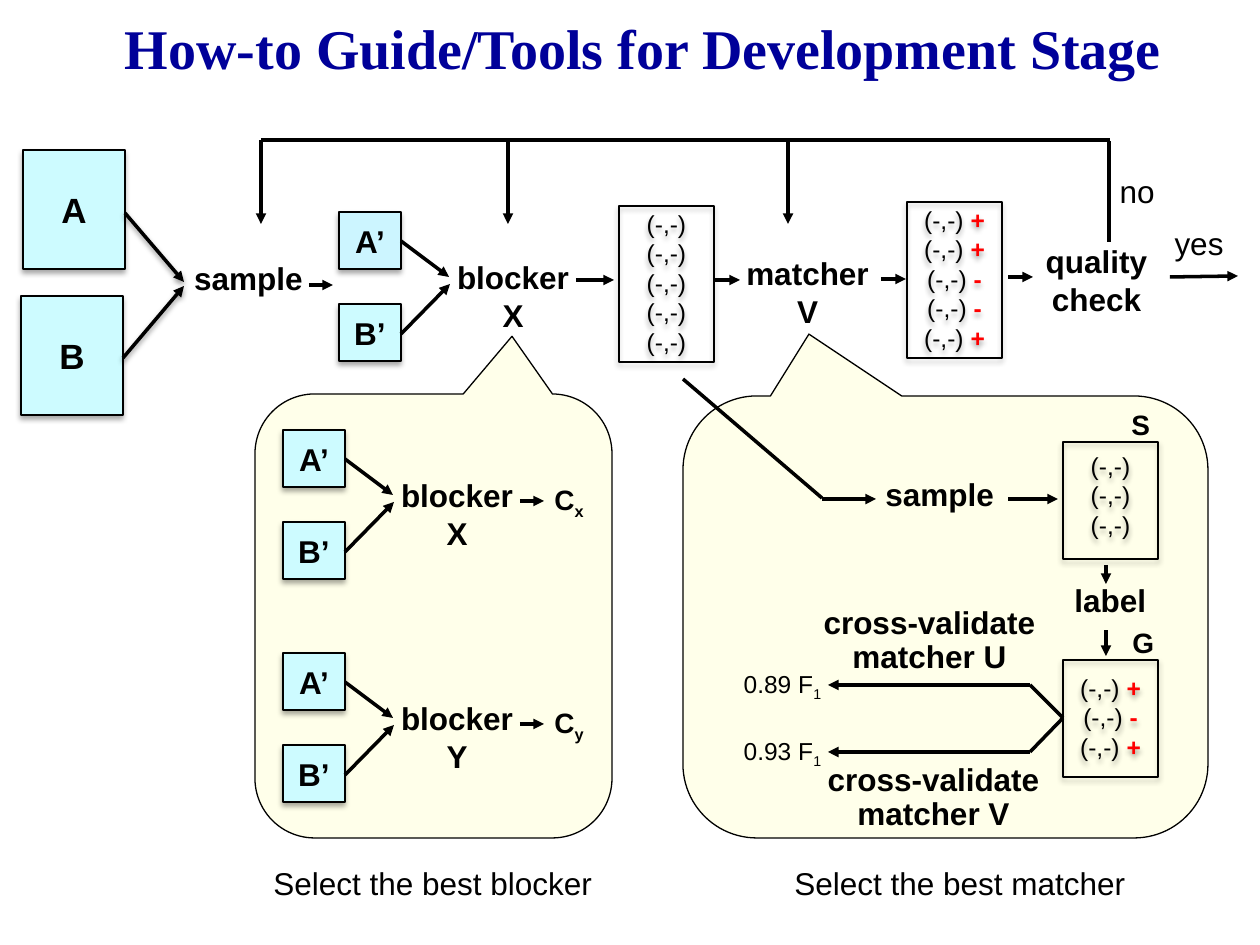
from dataclasses import dataclass

from lxml import etree
from pptx import Presentation
from pptx.dml.color import RGBColor
from pptx.enum.shapes import MSO_CONNECTOR, MSO_SHAPE
from pptx.enum.text import MSO_ANCHOR, PP_ALIGN
from pptx.oxml.ns import qn
from pptx.util import Emu, Pt

RECT = MSO_SHAPE.RECTANGLE
BUBBLE = MSO_SHAPE.ROUNDED_RECTANGULAR_CALLOUT
STRAIGHT = MSO_CONNECTOR.STRAIGHT
LEFT, MID = PP_ALIGN.LEFT, PP_ALIGN.CENTER
TOP, MIDDLE = MSO_ANCHOR.TOP, MSO_ANCHOR.MIDDLE

BLACK, RED, NAVY = "000000", "FF0000", "000099"
CYAN, SKY, CREAM = "CDFBFF", "CCF5FF", "FFFFEA"
SCALE = 914400 / 126


@dataclass
class Label:
    """Text box; "_" starts a subscript and "|" a red mark."""
    text: str
    x: int
    y: int
    w: int
    h: int
    size: int = 18
    bold: bool = True
    align: PP_ALIGN = MID
    gap: float = 1.0


@dataclass
class Frame:
    """Unfilled box with a list of pairs."""
    text: str
    x: int
    y: int
    h: int
    top: int


@dataclass
class Line:
    x1: int
    y1: int
    x2: int
    y2: int
    tip: bool = True
    shade: bool = False


def px(n: int) -> Emu:
    return Emu(round(n * SCALE))


def rgb(code: str) -> RGBColor:
    return RGBColor.from_string(code)


def style(run, size: int, bold: bool, color: str = BLACK) -> None:
    font = run.font
    font.name, font.size, font.bold = "Arial", Pt(size), bold
    font.color.rgb = rgb(color)


def write(frame, text: str, size: int, bold: bool, align=MID, gap: float = 1.0) -> None:
    frame.word_wrap = True
    frame.text = text
    for para in frame.paragraphs:
        para.alignment, para.line_spacing = align, gap
        full = para.text
        sign = next((s for s in "_|" if s in full), None)
        if sign is None:
            style(para.runs[0], size, bold)
            continue
        main, mark = full.split(sign)
        para.text = main
        style(para.runs[0], size, bold)
        run = para.add_run()
        run.text = mark
        if sign == "_":
            style(run, size, bold)
            run.font._element.set("baseline", "-25000")
        else:
            style(run, size, True, RED)


def shade(item, on: bool = True, alpha: int = 35) -> None:
    """Add an effect list, with a soft drop shadow if wanted."""
    props = item._element.spPr
    for old in props.findall(qn("a:effectLst")):
        props.remove(old)
    effects = etree.SubElement(props, qn("a:effectLst"))
    if on:
        drop = etree.SubElement(effects, qn("a:outerShdw"), blurRad="39400",
                                dist="22900", dir="5400000", rotWithShape="0")
        color = etree.SubElement(drop, qn("a:srgbClr"), val=BLACK)
        etree.SubElement(color, qn("a:alpha"), val=str(alpha * 1000))


def shape(kind, x: int, y: int, w: int, h: int, fill: str | None):
    item = slide.shapes.add_shape(kind, px(x), px(y), px(w), px(h))
    if fill:
        item.fill.solid()
        item.fill.fore_color.rgb = rgb(fill)
    else:
        item.fill.background()
    item.line.color.rgb = rgb(BLACK)
    item.line.width = Pt(0.75)
    return item


def draw_label(label: Label) -> None:
    box = slide.shapes.add_textbox(px(label.x), px(label.y), px(label.w), px(label.h))
    write(box.text_frame, label.text, label.size, label.bold, label.align, label.gap)


def draw_table(x: int, y: int, w: int, h: int, text: str, size: int, fill: str = CYAN) -> None:
    box = shape(RECT, x, y, w, h, fill)
    shade(box)
    box.text_frame.vertical_anchor = MIDDLE
    write(box.text_frame, text, size, True)


def draw_frame(frame: Frame) -> None:
    box = shape(RECT, frame.x, frame.y, 95, frame.h, None)
    shade(box)
    body = box.text_frame
    body.vertical_anchor, body.margin_top = TOP, px(frame.top)
    body.margin_left = body.margin_right = body.margin_bottom = 0
    write(body, frame.text, 14, False)


def draw_line(line: Line) -> None:
    link = slide.shapes.add_connector(STRAIGHT, px(line.x1), px(line.y1), px(line.x2), px(line.y2))
    link.line.color.rgb = rgb(BLACK)
    link.line.width = Pt(2)
    if line.tip:
        etree.SubElement(link.line._get_or_add_ln(), qn("a:tailEnd"), type="triangle")
    shade(link, line.shade, 38)


def draw_bubble(x: int, y: int, w: int, h: int, tip: tuple[float, float]) -> None:
    item = shape(BUBBLE, x, y, w, h, CREAM)
    item.shadow.inherit = False
    item.adjustments[0], item.adjustments[1] = tip
    item.adjustments[2] = 0.167


def draw_blocker(x: int, y: int, name: str, fill: str = CYAN) -> None:
    """Two sampled tables feeding one blocker."""
    draw_table(x, y, 62, 57, "A’", 18, fill)
    draw_table(x, y + 92, 62, 57, "B’", 18)
    draw_line(Line(x + 62, y + 29, x + 110, y + 65))
    draw_line(Line(x + 62, y + 122, x + 111, y + 72))
    draw_label(Label(f"blocker {name}", x + 103, y + 40, 142, 89))


deck = Presentation()
deck.slide_width, deck.slide_height = px(1260), px(945)
slide = deck.slides.add_slide(deck.slide_layouts[5])

# Title
title = slide.shapes.title
title.left, title.top, title.width, title.height = px(108), px(0), px(1071), px(94)
title.text_frame.text = "How-to Guide/Tools for Development Stage"
title.text_frame.vertical_anchor = MIDDLE
head = title.text_frame.paragraphs[0]
head.alignment = MID
style(head.runs[0], 32, True, NAVY)
head.runs[0].font.name = "Times New Roman"

# Callout bubbles
draw_bubble(255, 394, 357, 444, (0.22, -0.63))
draw_bubble(683, 396, 525, 442, (-0.26, -0.64))

# Input tables and blockers
draw_table(23, 150, 102, 119, "A", 20)
draw_table(21, 296, 102, 119, "B", 20)
draw_blocker(339, 212, "X", SKY)
for y, name in ((430, "X"), (653, "Y")):
    draw_blocker(283, y, name)
    draw_line(Line(520, y + 71, 544, y + 71))
    draw_label(Label(f"C_{name.lower()}", 542, y + 46, 60, 47, 16, align=LEFT))

# Lists of pairs
PAIR, YES, NO = "(-,-)", "(-,-) |+", "(-,-) |-"
for frame in (
    Frame("\n".join([PAIR] * 5), 619, 206, 156, 3),
    Frame("\n".join([YES, YES, NO, NO, YES]), 907, 202, 156, 3),
    Frame("\n".join([PAIR] * 3), 1063, 442, 117, 9),
    Frame("\n".join([YES, NO, YES]), 1063, 660, 117, 13),
):
    draw_frame(frame)

# Feedback loop
draw_line(Line(261, 140, 1110, 140, False))
draw_line(Line(1109, 242, 1109, 141, False))
for x in (261, 508, 788):
    draw_line(Line(x, 140, x, 224))

# Arrows between steps
for line in (
    Line(125, 213, 184, 282, shade=True),
    Line(123, 358, 184, 286, shade=True),
    Line(309, 285, 333, 285),
    Line(576, 280, 614, 280),
    Line(715, 280, 740, 280),
    Line(881, 279, 906, 279),
    Line(1008, 277, 1033, 277),
    Line(1170, 277, 1238, 276),
    Line(683, 379, 822, 498, False),
    Line(822, 499, 876, 499),
    Line(1008, 499, 1058, 499),
    Line(1106, 565, 1106, 584),
    Line(1106, 630, 1106, 656),
):
    draw_line(line)

# Cross-validation branches
for y, score in ((685, "0.89 F_1"), (752, "0.93 F_1")):
    draw_line(Line(1063, 718, 1030, y, False))
    draw_line(Line(1030, y, 828, y))
    draw_label(Label(score, 713, y - 22, 139, 43, 14, False))

# Step names and captions
for label in (
    Label("sample", 179, 253, 139, 50),
    Label("matcher V", 728, 248, 159, 89),
    Label("quality\ncheck", 990, 236, 213, 89),
    Label("no", 1051, 166, 172, 50, bold=False),
    Label("yes", 1151, 218, 96, 50, bold=False),
    Label("sample", 873, 469, 139, 50, align=LEFT),
    Label("label", 1062, 575, 118, 50, align=LEFT),
    Label("S", 1119, 401, 60, 47, 16, align=LEFT),
    Label("G", 1120, 619, 60, 47, 16, align=LEFT),
    Label("cross-validate\nmatcher U", 777, 601, 305, 82, gap=0.9),
    Label("cross-validate\nmatcher V", 781, 758, 305, 82, gap=0.9),
    Label("Select the best blocker", 261, 858, 354, 50, bold=False, align=LEFT),
    Label("Select the best matcher", 782, 858, 374, 50, bold=False, align=LEFT),
):
    draw_label(label)

deck.save("out.pptx")
